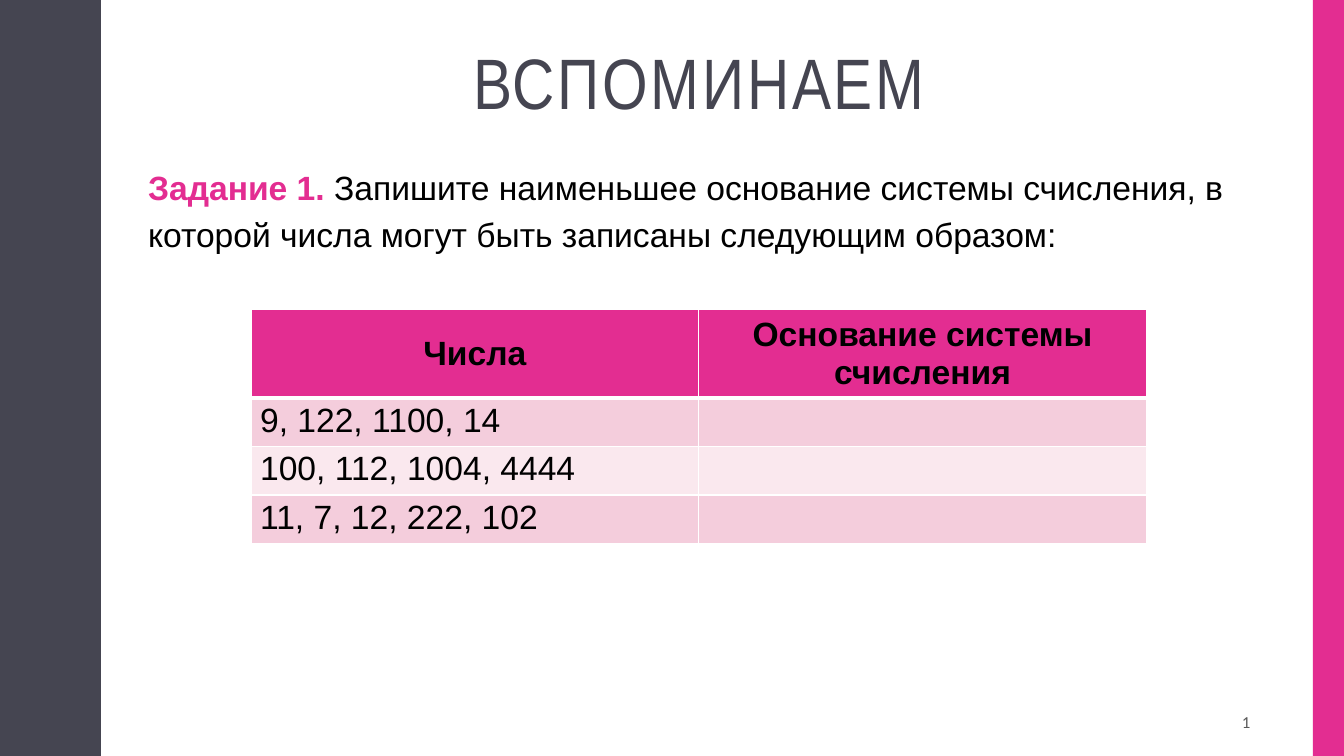
from lxml import etree
from pptx import Presentation
from pptx import util as u
from pptx.dml.color import RGBColor
from pptx.enum import shapes, text
from pptx.oxml.ns import qn

W, H = 13.33, 7.5
DARK, PINK, BLACK, WHITE, GREY = "454551", "E32D91", "000000", "FFFFFF", "595959"
BANDS = ["F4CDDC", "FAE8EE"]
LEFT, WIDTH = 1.37, 11.13
TITLE = "ВСПОМИНАЕМ"
TASK = [
    ("Задание 1. ", PINK, True),
    ("Запишите наименьшее основание системы счисления, "
     "в которой числа могут быть записаны следующим образом:", BLACK, False),
]
ROWS = [
    ("Числа", "Основание системы счисления"),
    ("9, 122, 1100, 14", ""),
    ("100, 112, 1004, 4444", ""),
    ("11, 7, 12, 222, 102", ""),
]
HEAD_H, ROW_H, COL_W = 0.83, 0.47, 4.44
WAVES = 5
QUARTER = [(0.78, 0), (0.78, 0.07), (0.79, 0.14), (0.8, 0.2),
           (0.81, 0.25), (0.83, 0.29), (0.85, 0.33)]


def rgb(value):
    """Turn a hex string into a colour."""
    return RGBColor.from_string(value)


def paint(sp, color):
    """Give a shape a flat fill without line or shadow."""
    sp.shadow.inherit = False
    sp.fill.solid()
    sp.fill.fore_color.rgb = rgb(color)
    sp.line.fill.background()


def set_font(font, name, size, color, bold=False):
    """Set the main properties of a font."""
    font.name, font.size, font.bold = name, u.Pt(size), bold
    font.color.rgb = rgb(color)


def add_text(slide, box, anchor, align):
    """Add a wrapping text box and return its first paragraph."""
    tf = slide.shapes.add_textbox(*map(u.Inches, box)).text_frame
    tf.word_wrap, tf.vertical_anchor = True, anchor
    p = tf.paragraphs[0]
    p.alignment = align
    return p


def add_wave(slide):
    """Draw the wavy band along the left edge."""
    period = H / WAVES
    rise = QUARTER + [(1.75 - x, period / 2 - y) for x, y in reversed(QUARTER)]
    wave = rise + [(x, period - y) for x, y in reversed(rise[:-1])]
    points = [(x, y + i * period) for i in range(WAVES) for x, y in wave]
    fb = slide.shapes.build_freeform(0, 0, scale=u.Inches(1))
    fb.add_line_segments(points + [(0, H)], close=True)
    paint(fb.convert_to_shape(), DARK)


def add_borders(cell, header):
    """Draw white borders, thicker below the header."""
    tc_pr = cell._tc.get_or_add_tcPr()
    for side in ("lnL", "lnR", "lnT", "lnB"):
        width = 3 if header and side == "lnB" else 1
        ln = etree.SubElement(tc_pr, qn(f"a:{side}"), w=str(u.Pt(width)))
        fill = etree.SubElement(ln, qn("a:solidFill"))
        etree.SubElement(fill, qn("a:srgbClr"), val=WHITE)


def add_numbers(slide):
    """Add the table of numbers."""
    n = len(ROWS)
    box = (2.49, 3.07, 2 * COL_W, HEAD_H + (n - 1) * ROW_H)
    table = slide.shapes.add_table(n, 2, *map(u.Inches, box)).table
    for i, row in enumerate(ROWS):
        header = i == 0
        table.rows[i].height = u.Inches(HEAD_H if header else ROW_H)
        for j, words in enumerate(row):
            cell = table.cell(i, j)
            cell.margin_left = cell.margin_right = u.Inches(0.09)
            cell.margin_top = cell.margin_bottom = u.Inches(0.04)
            add_borders(cell, header)
            cell.fill.solid()
            cell.fill.fore_color.rgb = rgb(PINK if header else BANDS[(i - 1) % 2])
            cell.text = words
            p = cell.text_frame.paragraphs[0]
            set_font(p.font, "Arial", 24, BLACK, header)
            if header:
                cell.vertical_anchor = text.MSO_ANCHOR.MIDDLE
                p.alignment = text.PP_ALIGN.CENTER


def main():
    """Build the slide and save it."""
    prs = Presentation()
    prs.slide_width, prs.slide_height = u.Inches(W), u.Inches(H)
    slide = prs.slides.add_slide(prs.slide_layouts[6])
    anchor, align = text.MSO_ANCHOR, text.PP_ALIGN

    add_wave(slide)
    stripe = (W - 0.31, 0, 0.31, H)
    paint(slide.shapes.add_shape(shapes.MSO_SHAPE.RECTANGLE,
                                 *map(u.Inches, stripe)), PINK)

    p = add_text(slide, (LEFT, 0.42, WIDTH, 0.88), anchor.MIDDLE, align.CENTER)
    p.line_spacing = 0.9
    r = p.add_run()
    r.text = TITLE
    set_font(p.font, "Arial Narrow", 51, DARK)
    r.font._element.set("spc", "200")

    p = add_text(slide, (LEFT, 1.55, WIDTH, 0.91), anchor.TOP, align.LEFT)
    p.line_spacing, p.space_before = 1.15, u.Pt(7)
    for words, color, bold in TASK:
        r = p.add_run()
        r.text = words
        set_font(r.font, "Arial", 24, color, bold)

    add_numbers(slide)

    p = add_text(slide, (LEFT + WIDTH - 3.08, 6.97, 3.08, 0.38),
                 anchor.MIDDLE, align.RIGHT)
    p.text = "1"
    set_font(p.font, "Calibri", 12, GREY)
    prs.save("out.pptx")


if __name__ == "__main__":
    main()
